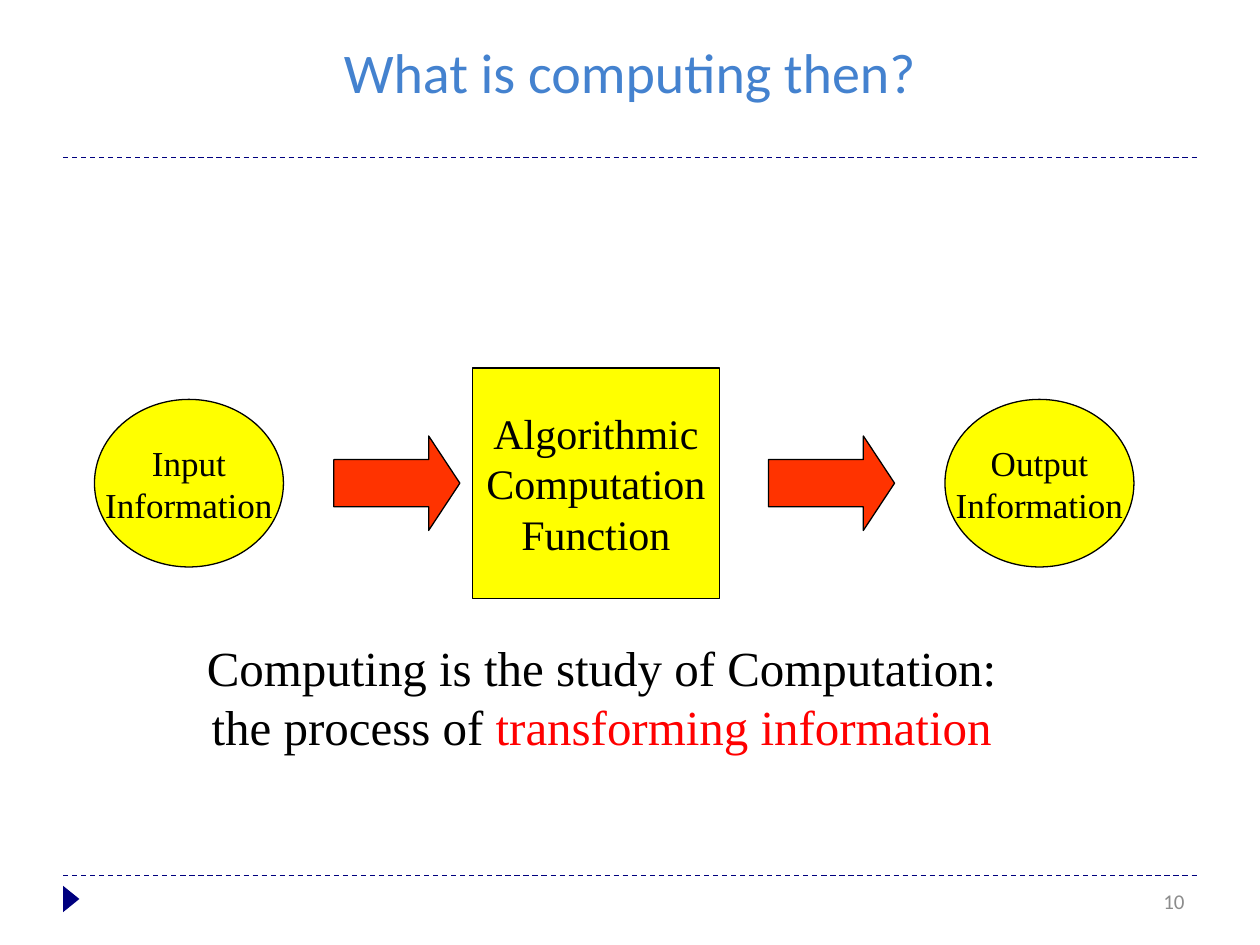
from dataclasses import dataclass

from lxml import etree
from pptx import Presentation
from pptx.dml.color import RGBColor
from pptx.enum.dml import MSO_LINE
from pptx.enum.shapes import MSO_CONNECTOR, MSO_SHAPE
from pptx.enum.text import MSO_ANCHOR, PP_ALIGN
from pptx.oxml.ns import qn
from pptx.shapes.autoshape import Shape
from pptx.slide import Slide
from pptx.text.text import TextFrame
from pptx.util import Emu, Pt

DASH = MSO_LINE.DASH
STRAIGHT = MSO_CONNECTOR.STRAIGHT
RECTANGLE, ELLIPSE = MSO_SHAPE.RECTANGLE, MSO_SHAPE.OVAL
ARROW, TRIANGLE = MSO_SHAPE.RIGHT_ARROW, MSO_SHAPE.ISOSCELES_TRIANGLE
TOP, MIDDLE = MSO_ANCHOR.TOP, MSO_ANCHOR.MIDDLE
CENTER, RIGHT = PP_ALIGN.CENTER, PP_ALIGN.RIGHT

EMU_PER_PX = 9144
SANS, SERIF = "Calibri", "Times New Roman"
BLACK, NAVY, BLUE, GREY = "000000", "00007F", "4482CF", "8C8C8C"
YELLOW, ORANGE, RED = "FFFF00", "FF3300", "FF0000"


@dataclass(frozen=True)
class Box:
    left: int
    top: int
    width: int
    height: int

    def emu(self) -> list[Emu]:
        return [px(n) for n in (self.left, self.top, self.width, self.height)]


@dataclass(frozen=True)
class Span:
    text: str
    color: str


@dataclass(frozen=True)
class TextStyle:
    font: str
    size: int
    color: str = BLACK
    align: PP_ALIGN = CENTER
    anchor: MSO_ANCHOR = MIDDLE
    wrap: bool = True


@dataclass(frozen=True)
class Stage:
    kind: MSO_SHAPE
    box: Box
    lines: tuple[str, ...]
    size: int


STAGES = (
    Stage(RECTANGLE, Box(375, 292, 196, 183), ("Algorithmic", "Computation", "Function"), 24),
    Stage(ELLIPSE, Box(75, 317, 150, 133), ("Input", "Information"), 20),
    Stage(ELLIPSE, Box(750, 317, 150, 133), ("Output", "Information"), 20),
)
ARROW_LEFTS = (265, 610)
RULE_TOPS = (125, 695)


def px(length: int) -> Emu:
    return Emu(length * EMU_PER_PX)


def rgb(color: str) -> RGBColor:
    return RGBColor.from_string(color)


def write(frame: TextFrame, lines: tuple[str | tuple[Span, ...], ...], style: TextStyle) -> None:
    frame.word_wrap = style.wrap
    frame.vertical_anchor = style.anchor
    for index, line in enumerate(lines):
        para = frame.add_paragraph() if index else frame.paragraphs[0]
        para.alignment = style.align
        para.font.name = style.font
        para.font.size = Pt(style.size)
        para.font.color.rgb = rgb(style.color)
        spans = (Span(line, style.color),) if isinstance(line, str) else line
        for span in spans:
            run = para.add_run()
            run.text = span.text
            run.font.color.rgb = rgb(span.color)


def add_shape(page: Slide, kind: MSO_SHAPE, box: Box, fill: str, outline: str | None = BLACK) -> Shape:
    shape = page.shapes.add_shape(kind, *box.emu())
    shape.shadow.inherit = False
    shape.fill.solid()
    shape.fill.fore_color.rgb = rgb(fill)
    if outline:
        shape.line.color.rgb = rgb(outline)
        shape.line.width = Pt(0.75)
    else:
        shape.line.fill.background()
    return shape


def add_rule(page: Slide, top: int) -> None:
    rule = page.shapes.add_connector(STRAIGHT, px(50), px(top), px(950), px(top))
    rule.line.color.rgb = rgb(NAVY)
    rule.line.width = Pt(0.75)
    rule.line.dash_style = DASH
    etree.SubElement(rule._element.spPr, qn("a:effectLst"))


def add_stage(page: Slide, stage: Stage) -> None:
    shape = add_shape(page, stage.kind, stage.box, YELLOW)
    write(shape.text_frame, stage.lines, TextStyle(SERIF, stage.size, wrap=False))


def add_arrow(page: Slide, left: int) -> None:
    arrow = add_shape(page, ARROW, Box(left, 346, 100, 75), ORANGE)
    arrow.adjustments[0] = 0.5
    arrow.adjustments[1] = 0.33


def add_text(page: Slide, box: Box, lines: tuple[str | tuple[Span, ...], ...], style: TextStyle) -> None:
    write(page.shapes.add_textbox(*box.emu()).text_frame, lines, style)


def set_title(page: Slide, text: str) -> None:
    title = page.shapes.title
    title.left, title.top, title.width, title.height = Box(50, 25, 900, 100).emu()
    write(title.text_frame, (text,), TextStyle(SANS, 32, BLUE, anchor=TOP))


def main() -> None:
    deck = Presentation()
    deck.slide_width, deck.slide_height = px(1000), px(750)
    page = deck.slides.add_slide(deck.slide_layouts[5])

    for top in RULE_TOPS:
        add_rule(page, top)
    marker = add_shape(page, TRIANGLE, Box(46, 707, 21, 13), NAVY, None)
    marker.rotation = 90
    set_title(page, "What is computing then?")
    add_text(page, Box(717, 695, 233, 40), ("10",), TextStyle(SANS, 12, GREY, RIGHT))

    for stage in STAGES:
        add_stage(page, stage)
    for left in ARROW_LEFTS:
        add_arrow(page, left)

    summary = (
        "Computing is the study of Computation:",
        (Span("the process of ", BLACK), Span("transforming information", RED)),
    )
    add_text(page, Box(122, 501, 711, 103), summary, TextStyle(SERIF, 28, anchor=TOP))
    deck.save("out.pptx")


if __name__ == "__main__":
    main()
